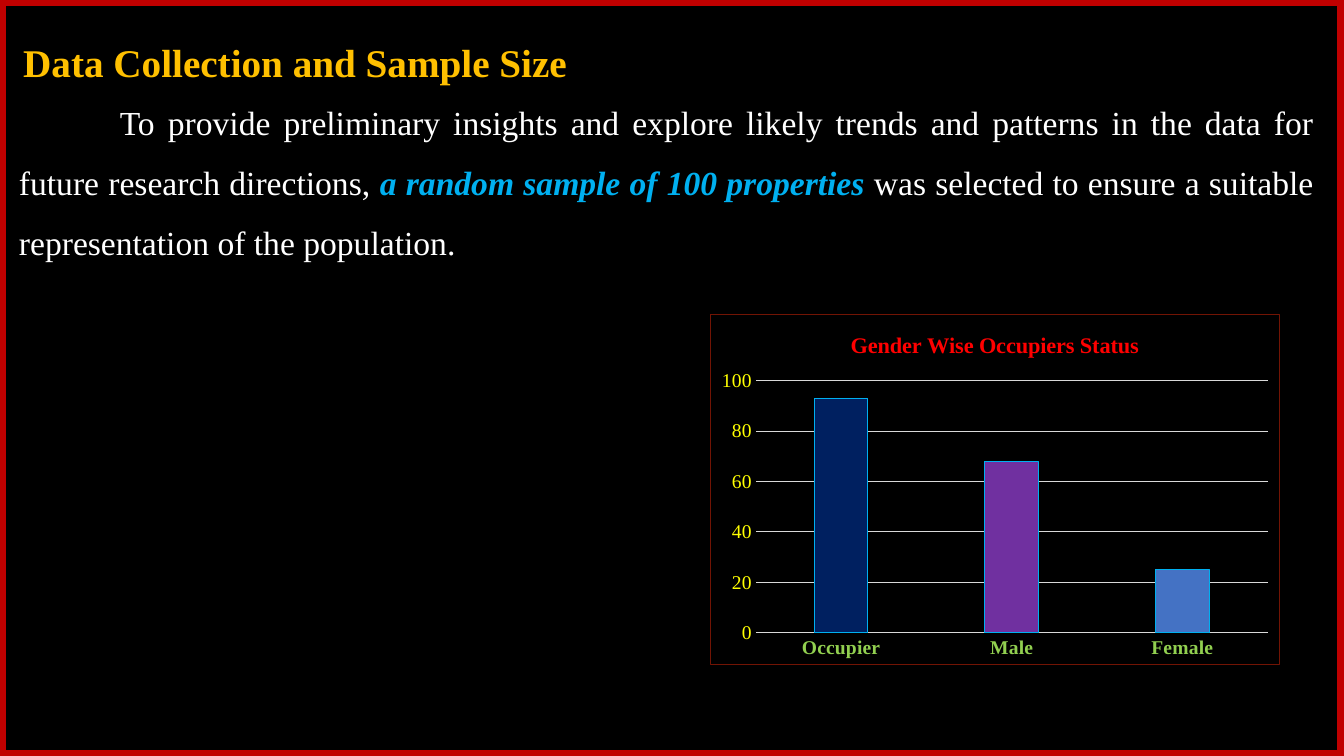
import pptx
import pptx.chart.data
import pptx.dml.color
import pptx.enum.chart
import pptx.enum.shapes
import pptx.enum.text
import pptx.oxml
import pptx.oxml.ns
import pptx.util

Pt = pptx.util.Pt
SERIF = "Times New Roman"
CHART_NS = pptx.oxml.ns.nsdecls("c", "a")


def colour(hex_string):
    return pptx.dml.color.RGBColor.from_string(hex_string)


def style_font(font, size, hex_string, bold=False, italic=False):
    font.name = SERIF
    font.size = Pt(size)
    font.bold = bold
    font.italic = italic
    font.color.rgb = colour(hex_string)


def style_line(line, hex_string, width=0.75):
    line.color.rgb = colour(hex_string)
    line.width = Pt(width)


def add_frame(page, box):
    frame = page.shapes.add_shape(
        pptx.enum.shapes.MSO_SHAPE.RECTANGLE, *map(Pt, box))
    frame.shadow.inherit = False
    frame.fill.background()
    style_line(frame.line, "C00000", 6)


def add_justified_text(page, box, size, spans, anchor, indent=0):
    """Add one justified paragraph; each span is (text, colour, bold, italic)."""
    text_box = page.shapes.add_textbox(*map(Pt, box))
    text_frame = text_box.text_frame
    text_frame.word_wrap = True
    text_frame.vertical_anchor = anchor
    para = text_frame.paragraphs[0]
    para.alignment = pptx.enum.text.PP_ALIGN.JUSTIFY
    para.line_spacing = 1.5
    para._p.get_or_add_pPr().set("indent", str(Pt(indent)))
    for text, hex_string, bold, italic in spans:
        span = para.add_run()
        span.text = text
        style_font(span.font, size, hex_string, bold, italic)


def style_axes(chart):
    no_tick = pptx.enum.chart.XL_TICK_MARK.NONE
    for axis in (chart.category_axis, chart.value_axis):
        axis.major_tick_mark = no_tick
        axis.minor_tick_mark = no_tick
    style_font(chart.category_axis.tick_labels.font, 14, "92D050", bold=True)
    style_line(chart.category_axis.format.line, "D9D9D9")
    values = chart.value_axis
    values.minimum_scale, values.maximum_scale, values.major_unit = 0, 100, 20
    style_font(values.tick_labels.font, 14, "FFFF00")
    values.format.line.fill.background()
    style_line(values.major_gridlines.format.line, "D9D9D9")


def place_plot(chart, x, y, w, h):
    """Fix the inner plot area, in fractions of the chart."""
    plot_area = chart._chartSpace.chart.plotArea
    for layout in plot_area.findall(pptx.oxml.ns.qn("c:layout")):
        plot_area.remove(layout)
    plot_area.insert(0, pptx.oxml.parse_xml(
        f'<c:layout {CHART_NS}><c:manualLayout><c:layoutTarget val="inner"/>'
        '<c:xMode val="edge"/><c:yMode val="edge"/>'
        f'<c:x val="{x}"/><c:y val="{y}"/><c:w val="{w}"/><c:h val="{h}"/>'
        '</c:manualLayout></c:layout>'))


def add_chart_border(chart, hex_string):
    chart._chartSpace.chart.addnext(pptx.oxml.parse_xml(
        f'<c:spPr {CHART_NS}><a:noFill/><a:ln w="{Pt(0.75)}"><a:solidFill>'
        f'<a:srgbClr val="{hex_string}"/></a:solidFill></a:ln></c:spPr>'))


def add_status_chart(page, box):
    data = pptx.chart.data.CategoryChartData()
    data.categories = ["Occupier", "Male", "Female"]
    data.add_series("Series 1", (93, 68, 25))
    chart = page.shapes.add_chart(
        pptx.enum.chart.XL_CHART_TYPE.COLUMN_CLUSTERED,
        *map(Pt, box), data).chart
    chart.font.name = "Calibri"
    chart.font.size = Pt(10)
    chart.font.color.rgb = colour("000000")
    chart.has_legend = False

    chart.has_title = True
    span = chart.chart_title.text_frame.paragraphs[0].add_run()
    span.text = "Gender Wise Occupiers Status"
    style_font(span.font, 16, "FF0000", bold=True)
    chart.chart_title.include_in_layout = False

    plot = chart.plots[0]
    plot.vary_by_categories = False
    plot.gap_width = 219
    plot.overlap = -27
    series = plot.series[0]
    series.format.fill.solid()
    series.format.fill.fore_color.rgb = colour("4472C4")
    style_line(series.format.line, "00B0F0")
    for index, hex_string in enumerate(("002060", "7030A0")):
        column = series.points[index].format
        column.fill.solid()
        column.fill.fore_color.rgb = colour(hex_string)
        style_line(column.line, "00B0F0")

    style_axes(chart)
    place_plot(chart, 0.08, 0.19, 0.9, 0.72)
    add_chart_border(chart, "721404")


def add_sample_page(deck):
    page = deck.slides.add_slide(deck.slide_layouts[6])
    page.background.fill.solid()
    page.background.fill.fore_color.rgb = colour("000000")
    anchors = pptx.enum.text.MSO_ANCHOR
    add_frame(page, (1.5, 1.5, 956.5, 537.5))
    add_justified_text(
        page, (9.5, 8, 940, 56), 28,
        [("Data Collection and Sample Size", "FFC000", True, False)],
        anchors.MIDDLE)
    add_justified_text(
        page, (6.5, 54.5, 939, 446), 24,
        [("To provide preliminary insights and explore likely trends and "
          "patterns in the data for future research directions, ",
          "FFFFFF", False, False),
         ("a random sample of 100 properties ", "00B0F0", True, True),
         ("was selected to ensure a suitable representation of the "
          "population.", "FFFFFF", False, False)],
        anchors.TOP, indent=72)
    add_status_chart(page, (507, 224, 407, 251))


def main():
    deck = pptx.Presentation()
    deck.slide_width, deck.slide_height = Pt(960), Pt(540)
    add_sample_page(deck)
    deck.save("out.pptx")


if __name__ == "__main__":
    main()
